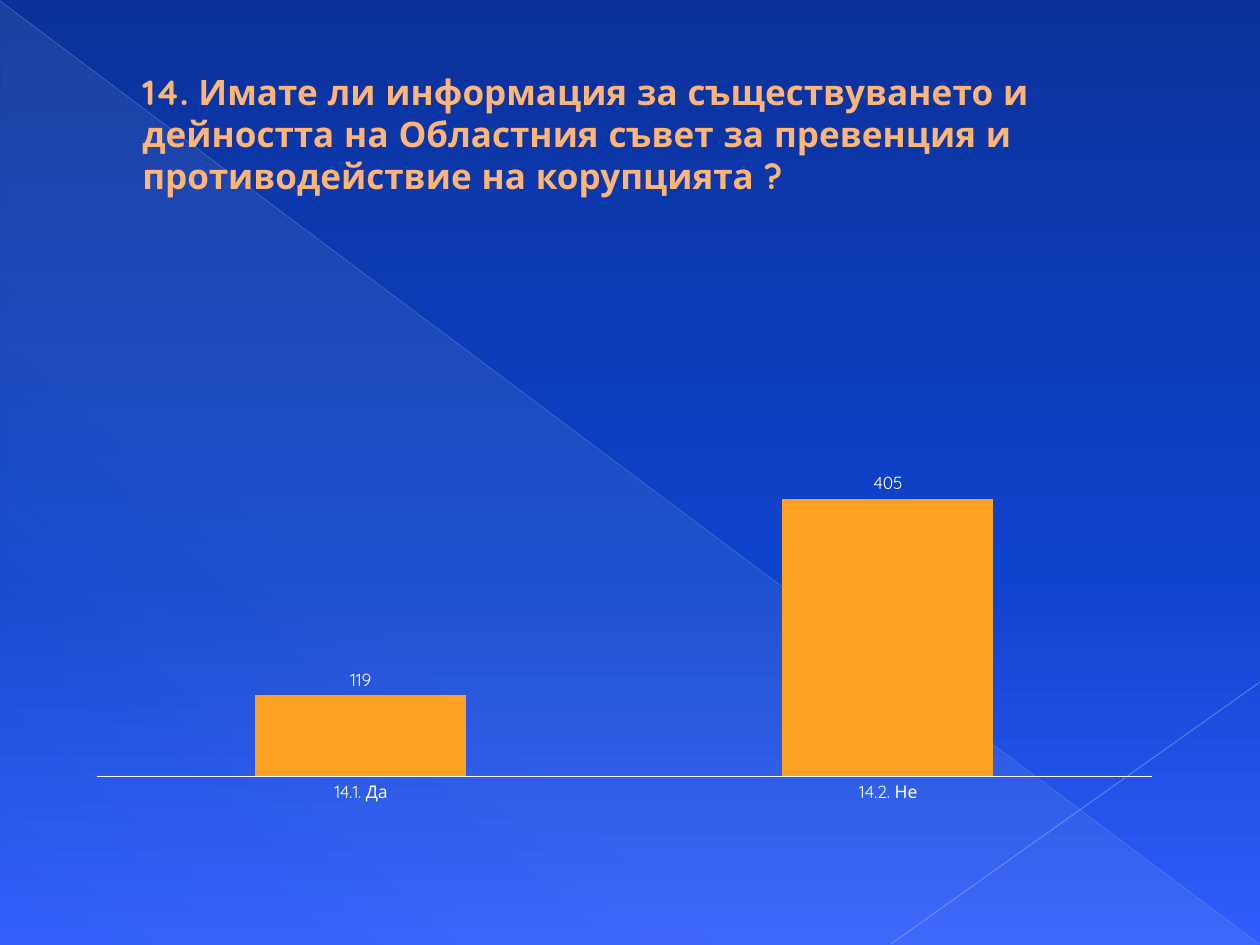
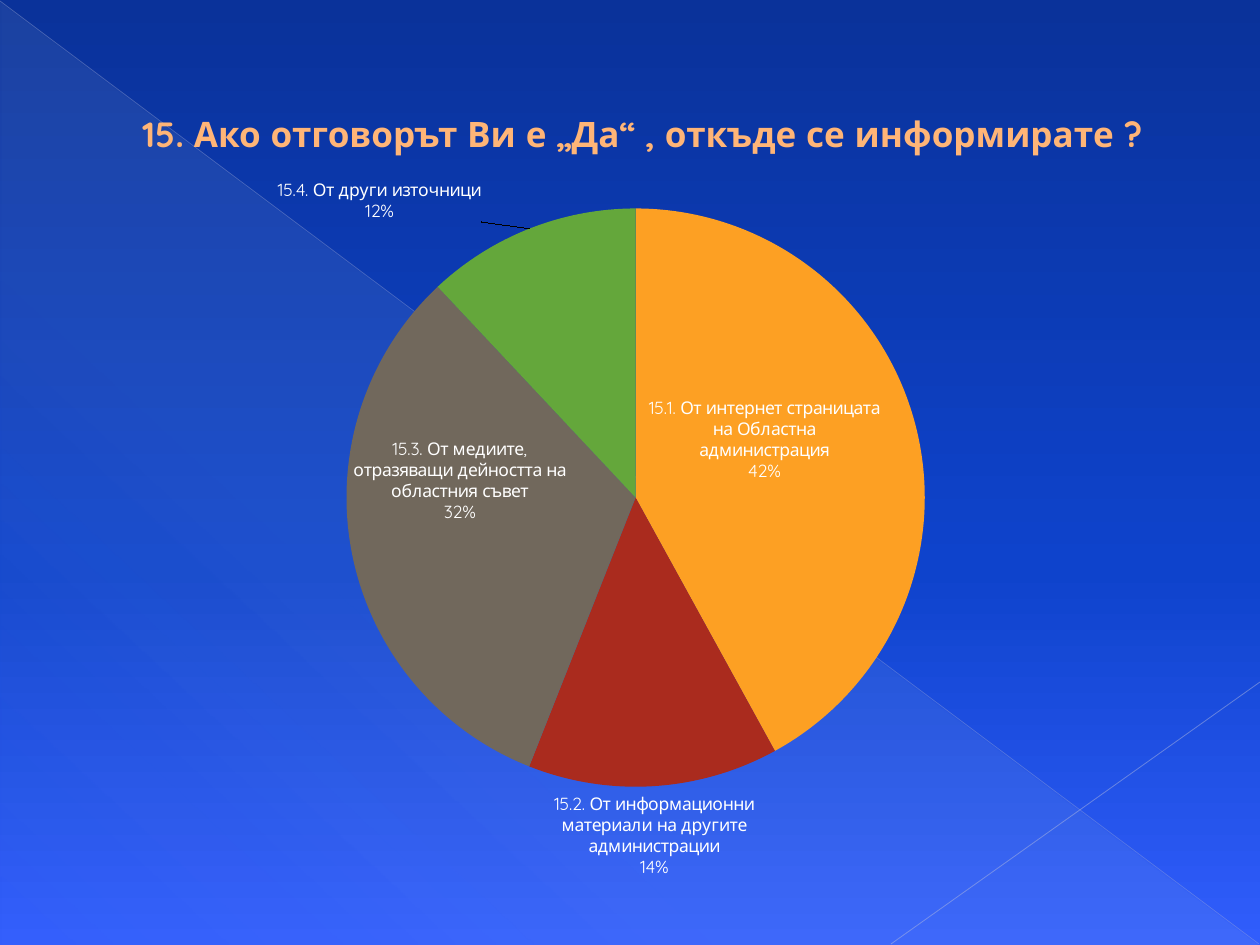
from lxml import etree
from pptx import Presentation
from pptx.chart.data import CategoryChartData
from pptx.dml.color import RGBColor
from pptx.enum.chart import XL_CHART_TYPE as CT, XL_LABEL_POSITION as POS, XL_TICK_MARK as TICK
from pptx.enum.shapes import MSO_CONNECTOR, MSO_SHAPE
from pptx.enum.text import MSO_ANCHOR
from pptx.oxml import parse_xml
from pptx.oxml.ns import nsdecls, qn
from pptx.util import Pt

PX = 914400 / 126
FONT = "Quicksand"
WHITE = RGBColor(0xFF, 0xFF, 0xFF)
PEACH = RGBColor(0xFF, 0xB5, 0x77)
BROWN = RGBColor(0xAF, 0x6F, 0x18)
ORANGE = RGBColor(0xFD, 0xA0, 0x23)
RED = RGBColor(0xAA, 0x2B, 0x1E)
TAUPE = RGBColor(0x71, 0x68, 0x5C)
GREEN = RGBColor(0x64, 0xA7, 0x3B)
NAVY = RGBColor(0x0A, 0x32, 0x9A)
BLUE = RGBColor(0x0E, 0x43, 0xCC)
SKY = RGBColor(0x31, 0x5D, 0xFC)
MIST = RGBColor(0xCC, 0xDD, 0xEA)
LILAC = RGBColor(0xAD, 0xB6, 0xDC)
PALE = RGBColor(0xB7, 0xBE, 0xDF)

BACKDROP = [(0, NAVY, 100), (60, BLUE, 100), (100, SKY, 100)]
HAZE = [(0, MIST, 10), (70, MIST, 8), (100, MIST, 1)]
# start x, start y, end x, end y, colour, width, opacity in percent
DIAGONALS = [(0, 1, 1259, 944, LILAC, 0.39, 35), (1260, 682, 891, 944, PALE, 0.47, 45)]

TITLES = [
    "14. Имате ли информация за съществуването и дейността на Областния съвет "
    "за превенция и противодействие на корупцията ?",
    "15.\u00a0Ако отговорът Ви е „Да“ , откъде се информирате ?",
]
SOURCES = [
    ("15.1. От интернет страницата на Областна администрация", 42, ORANGE),
    ("15.2. От информационни материали на другите администрации", 14, RED),
    ("15.3. От медиите, отразяващи дейността на областния съвет", 32, TAUPE),
    ("15.4. От други източници", 12, GREEN),
]
# slice index: label position, horizontal and vertical shift as shares of the chart
LABEL_SHIFTS = {
    0: (POS.CENTER, -0.01, -0.03),
    2: (POS.CENTER, -0.03, -0.06),
    3: (POS.OUTSIDE_END, -0.04, 0),
}


def px(*lengths):
    return [round(n * PX) for n in lengths]


def add_text(s, text, box, size=20, color=WHITE, outline=None, bold=False, indent=0):
    tf = s.shapes.add_textbox(*px(*box)).text_frame
    tf.word_wrap = True
    tf.vertical_anchor = MSO_ANCHOR.MIDDLE
    p = tf.paragraphs[0]
    pPr = p._p.get_or_add_pPr()
    pPr.set("marL", str(px(indent)[0]))
    pPr.set("indent", "0")
    r = p.add_run()
    r.text = text
    r.font.name, r.font.size, r.font.bold = FONT, Pt(size), bold
    r.font.color.rgb = color
    if outline:
        r._r.rPr.insert(0, parse_xml(
            f'<a:ln {nsdecls("a")} w="6350"><a:solidFill><a:srgbClr val="{outline}"/>'
            '</a:solidFill></a:ln>'))


prs = Presentation()
prs.slide_width, prs.slide_height = px(1260, 945)
slides = []

for title in TITLES:
    s = prs.slides.add_slide(prs.slide_layouts[6])
    slides.append(s)
    s.background.fill.solid()
    sp = s.shapes.add_shape(MSO_SHAPE.RIGHT_TRIANGLE, *px(1, 2, 1258, 943))
    sp.shadow.inherit = False
    sp.fill.solid()
    sp.line.fill.background()

    bg = s._element.find(".//" + qn("p:bgPr"))
    for holder, stops, angle in ((bg, BACKDROP, 90), (sp._element.spPr, HAZE, 133)):
        gs = "".join(
            f'<a:gs pos="{pos * 1000}"><a:srgbClr val="{color}">'
            f'<a:alpha val="{alpha * 1000}"/></a:srgbClr></a:gs>'
            for pos, color, alpha in stops)
        holder.replace(holder.find(qn("a:solidFill")), parse_xml(
            f'<a:gradFill {nsdecls("a")} rotWithShape="1"><a:gsLst>{gs}</a:gsLst>'
            f'<a:lin ang="{angle * 60000}" scaled="0"/></a:gradFill>'))

    for x1, y1, x2, y2, color, width, opacity in DIAGONALS:
        line = s.shapes.add_connector(MSO_CONNECTOR.STRAIGHT, *px(x1, y1, x2, y2))
        line.line.color.rgb = color
        line.line.width = Pt(width)
        spPr = line._element.spPr
        alpha = etree.SubElement(spPr.find(".//" + qn("a:srgbClr")), qn("a:alpha"))
        alpha.set("val", str(opacity * 1000))
        etree.SubElement(spPr, qn("a:effectLst"))

    add_text(s, title, (63, 37, 1134, 193), color=PEACH, outline=BROWN, bold=True, indent=67)

answers = CategoryChartData()
answers.categories = ["14.1. Да", "14.2. Не"]
answers.add_series("Series 1", (119, 405))
sources = CategoryChartData()
sources.categories = [name for name, share, color in SOURCES]
sources.add_series("Series 1", [share for name, share, color in SOURCES])

# chart type, data, box, inner plot area as shares of the chart
CHARTS = [
    (CT.COLUMN_CLUSTERED, answers, (63, 260, 1134, 630), (0.03, 0.33, 0.93, 0.49)),
    (CT.PIE, sources, (63, 155, 1134, 745), (0.25, 0.07, 0.51, 0.78)),
]
charts = []
for s, (kind, data, box, inner) in zip(slides, CHARTS):
    chart = s.shapes.add_chart(kind, *px(*box), data).chart
    charts.append(chart)
    chart.has_legend = chart.has_title = False
    chart.font.name, chart.font.size = FONT, Pt(10)
    chart.font.color.rgb = WHITE
    area = chart._chartSpace.find(".//" + qn("c:plotArea"))
    for old in area.findall(qn("c:layout")):
        area.remove(old)
    sides = "".join(f'<c:{tag} val="{v}"/>' for tag, v in zip("xywh", inner))
    area.insert(0, parse_xml(
        f'<c:layout {nsdecls("c")}><c:manualLayout><c:layoutTarget val="inner"/>'
        f'<c:xMode val="edge"/><c:yMode val="edge"/>{sides}</c:manualLayout></c:layout>'))

columns, pie = charts
plot = columns.plots[0]
plot.vary_by_categories = False
plot.gap_width, plot.overlap = 150, -25
bars = plot.series[0]
bars.format.fill.solid()
bars.format.fill.fore_color.rgb = ORANGE
bars.data_labels.show_value = True
bars.data_labels.position = POS.OUTSIDE_END
axis = columns.category_axis
axis.major_tick_mark = axis.minor_tick_mark = TICK.NONE
axis.format.line.color.rgb = WHITE
axis.format.line.width = Pt(0.75)
values = columns.value_axis
values.visible = values.has_major_gridlines = False
values.minimum_scale, values.maximum_scale = 0, 450

pie.plots[0].vary_by_categories = True
slices = pie.plots[0].series[0]
for i, (name, share, color) in enumerate(SOURCES):
    fill = slices.points[i].format.fill
    fill.solid()
    fill.fore_color.rgb = color
labels = slices.data_labels
labels.position = POS.OUTSIDE_END
for i, (position, dx, dy) in LABEL_SHIFTS.items():
    slices.points[i].data_label.position = position
for group in [labels._element, *labels._element.findall(qn("c:dLbl"))]:
    for tag, shown in (("showVal", 0), ("showCatName", 1), ("showPercent", 1)):
        group.find(qn("c:" + tag)).set("val", str(shown))
    separator = etree.Element(qn("c:separator"))
    separator.text = "\n"
    last = group.find(qn("c:showBubbleSize"))
    if last is None:
        last = group.find(qn("c:showPercent"))
    last.addnext(separator)
for label, (position, dx, dy) in zip(labels._element.findall(qn("c:dLbl")), LABEL_SHIFTS.values()):
    label.insert(1, parse_xml(
        f'<c:layout {nsdecls("c")}><c:manualLayout><c:x val="{dx}"/><c:y val="{dy}"/>'
        '</c:manualLayout></c:layout>'))

prs.save("out.pptx")
